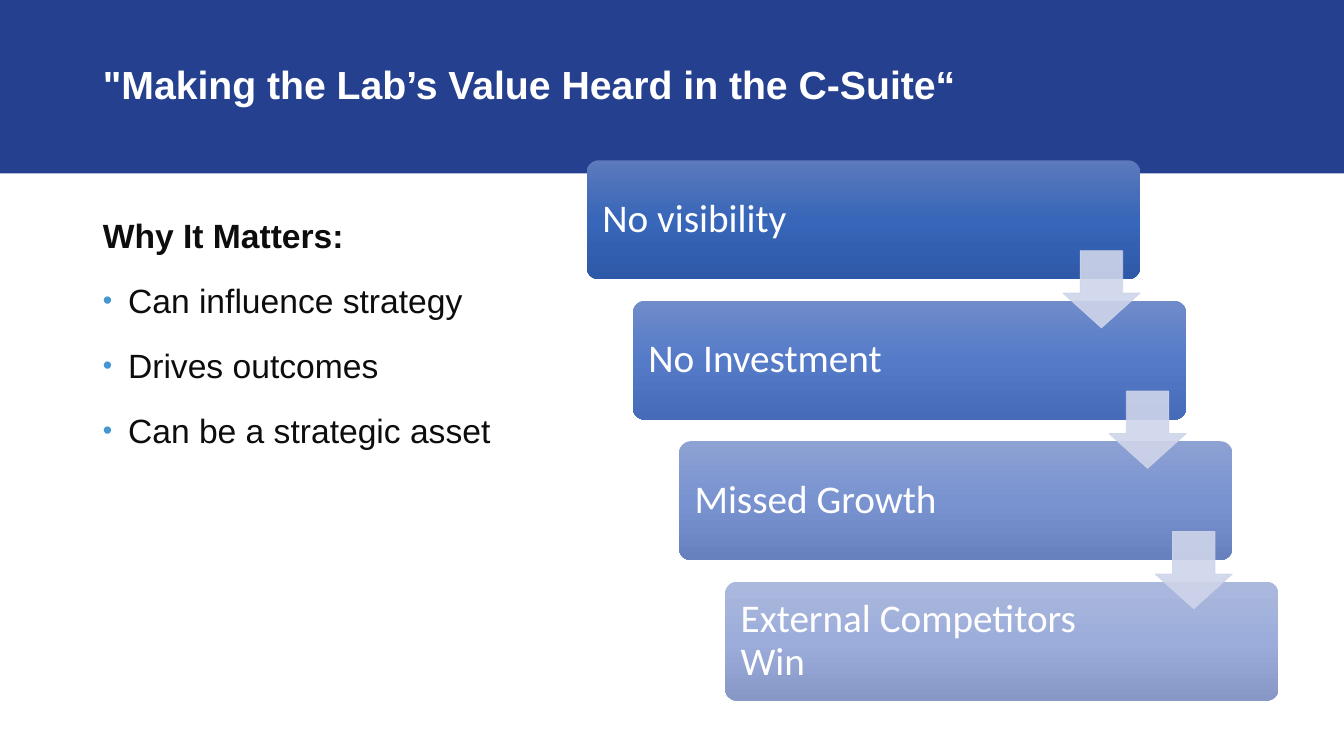
from copy import deepcopy
from dataclasses import dataclass

from lxml import etree
from pptx import Presentation
from pptx.dml.color import RGBColor
from pptx.enum.shapes import MSO_SHAPE
from pptx.enum.text import MSO_ANCHOR, MSO_AUTO_SIZE, PP_ALIGN
from pptx.oxml.ns import qn
from pptx.util import Inches, Pt

RECTANGLE = MSO_SHAPE.RECTANGLE
ROUNDED = MSO_SHAPE.ROUNDED_RECTANGLE
DOWN_ARROW = MSO_SHAPE.DOWN_ARROW
LEFT = PP_ALIGN.LEFT
TOP, MIDDLE = MSO_ANCHOR.TOP, MSO_ANCHOR.MIDDLE
NO_AUTOFIT = MSO_AUTO_SIZE.NONE


@dataclass(frozen=True)
class Theme:
    band: str = "25408F"
    light: str = "FFFFFF"
    ink: str = "0D0D0D"
    bullet: str = "4696D2"
    arrow: str = "CFD5EA"
    text_font: str = "Arial"
    step_font: str = "Calibri"
    title_size: int = 28
    body_size: int = 24
    step_size: int = 28


@dataclass(frozen=True)
class Box:
    """A region in inches."""
    left: float
    top: float
    width: float
    height: float

    def lengths(self):
        return [Inches(n) for n in (self.left, self.top, self.width, self.height)]


THEME = Theme()
SLIDE = Box(0, 0, 13.33, 7.5)
BAND = Box(0, 0, SLIDE.width, 1.72)
TITLE = Box(0.92, 0.14, 11.5, 1.45)
REASONS = Box(0.92, 2, 5.67, 4.23)
STAIRCASE = Box(5.82, 1.59, 6.86, 5.36)

REASON_LINES = ["Can influence strategy", "Drives outcomes", "Can be a strategic asset"]
STEPS = [
    ("No visibility", ("5C7ABD", "3866B8", "2D59A8")),
    ("No Investment", ("708BCA", "557BC8", "466BB8")),
    ("Missed Growth", ("8DA1D3", "7993D1", "6781BE")),
    ("External Competitors Win", ("ABB8DD", "9CADDB", "8798C6")),
]


def set_font(para, name, size, color, bold=False):
    para.font.name = name
    para.font.size = Pt(size)
    para.font.bold = bold
    para.font.color.rgb = RGBColor.from_string(color)


def add_plain_shape(page, kind, box):
    shape = page.shapes.add_shape(kind, *box.lengths())
    shape.shadow.inherit = False
    shape.line.fill.background()
    return shape


def place(placeholder, box, anchor):
    placeholder.left, placeholder.top, placeholder.width, placeholder.height = box.lengths()
    frame = placeholder.text_frame
    frame.auto_size = NO_AUTOFIT
    frame.word_wrap = True
    frame.vertical_anchor = anchor
    return frame


def add_title(page, band_box, title_box):
    band = add_plain_shape(page, RECTANGLE, band_box)
    band.fill.solid()
    band.fill.fore_color.rgb = RGBColor.from_string(THEME.band)
    page.shapes.title._element.addprevious(band._element)
    para = place(page.shapes.title, title_box, MIDDLE).paragraphs[0]
    para.text = "\"Making the Lab’s Value Heard in the C-Suite“"
    para.alignment = LEFT
    para.line_spacing = 0.9
    set_font(para, THEME.text_font, THEME.title_size, THEME.light, bold=True)


def set_bullet(para, bulleted):
    """Give the paragraph a hanging bullet, or take the inherited one away."""
    props = para._p.get_or_add_pPr()
    indent = Inches(0.25) if bulleted else 0
    props.set("marL", str(indent))
    props.set("indent", str(-indent))
    if not bulleted:
        etree.SubElement(props, qn("a:buNone"))
        return
    color = etree.SubElement(props, qn("a:buClr"))
    etree.SubElement(color, qn("a:srgbClr"), val=THEME.bullet)
    etree.SubElement(props, qn("a:buSzPct"), val="80000")
    etree.SubElement(props, qn("a:buFont"), typeface=THEME.text_font)
    etree.SubElement(props, qn("a:buChar"), char="•")


def add_reasons(page, box):
    frame = place(page.placeholders[1], box, TOP)
    lines = ["Why It Matters:"] + REASON_LINES
    for index, line in enumerate(lines):
        para = frame.add_paragraph() if index else frame.paragraphs[0]
        para.text = line
        set_bullet(para, bulleted=index > 0)
        para.line_spacing = 1.2
        para.space_before = Pt(6 if index else 0)
        para.space_after = Pt(6)
        set_font(para, THEME.text_font, THEME.body_size, THEME.ink, bold=index == 0)


def fill_downward(shape, colors):
    """Fill the shape with evenly spaced colours from top to bottom."""
    fill = shape.fill
    fill.gradient()
    fill.gradient_angle = 270
    stop_list = shape._element.spPr.find(qn("a:gradFill")).find(qn("a:gsLst"))
    while len(stop_list) < len(colors):
        stop_list.append(deepcopy(stop_list[-1]))
    for index, (stop, color) in enumerate(zip(fill.gradient_stops, colors)):
        stop.position = index / (len(colors) - 1)
        stop.color.rgb = RGBColor.from_string(color)


def add_step(page, box, label, colors):
    step = add_plain_shape(page, ROUNDED, box)
    step.adjustments[0] = 0.1
    fill_downward(step, colors)
    frame = step.text_frame
    frame.word_wrap = True
    frame.vertical_anchor = MIDDLE
    frame.margin_left = frame.margin_top = frame.margin_bottom = Inches(0.12)
    frame.margin_right = Inches(1.35)
    para = frame.paragraphs[0]
    para.text = label
    para.alignment = LEFT
    para.line_spacing = 0.9
    set_font(para, THEME.step_font, THEME.step_size, THEME.light)


def add_arrow(page, step_box):
    """Add an arrow flush with the step's right side, reaching into the next step."""
    side = 0.65 * step_box.height
    box = Box(step_box.left + step_box.width - side,
              step_box.top + 0.76 * step_box.height, side, side)
    arrow = add_plain_shape(page, DOWN_ARROW, box)
    arrow.adjustments[0] = 0.55
    arrow.adjustments[1] = 0.45
    arrow.line.width = Pt(0.5)
    for fill in (arrow.fill, arrow.line.fill):
        fill.solid()
        fill.fore_color.rgb = RGBColor.from_string(THEME.arrow)
    for color in arrow._element.spPr.iter(qn("a:srgbClr")):
        etree.SubElement(color, qn("a:alpha"), val="90000")


def add_staircase(page, box):
    width, height = 0.8 * box.width, 0.22 * box.height
    gaps = len(STEPS) - 1
    step_boxes = [Box(box.left + index * (box.width - width) / gaps,
                      box.top + index * (box.height - height) / gaps, width, height)
                  for index in range(len(STEPS))]
    for step_box, (label, colors) in zip(step_boxes, STEPS):
        add_step(page, step_box, label, colors)
    for step_box in step_boxes[:-1]:
        add_arrow(page, step_box)


def main():
    deck = Presentation()
    deck.slide_width, deck.slide_height = SLIDE.lengths()[2:]
    page = deck.slides.add_slide(deck.slide_layouts[1])
    add_title(page, BAND, TITLE)
    add_reasons(page, REASONS)
    add_staircase(page, STAIRCASE)
    deck.save("out.pptx")


if __name__ == "__main__":
    main()
